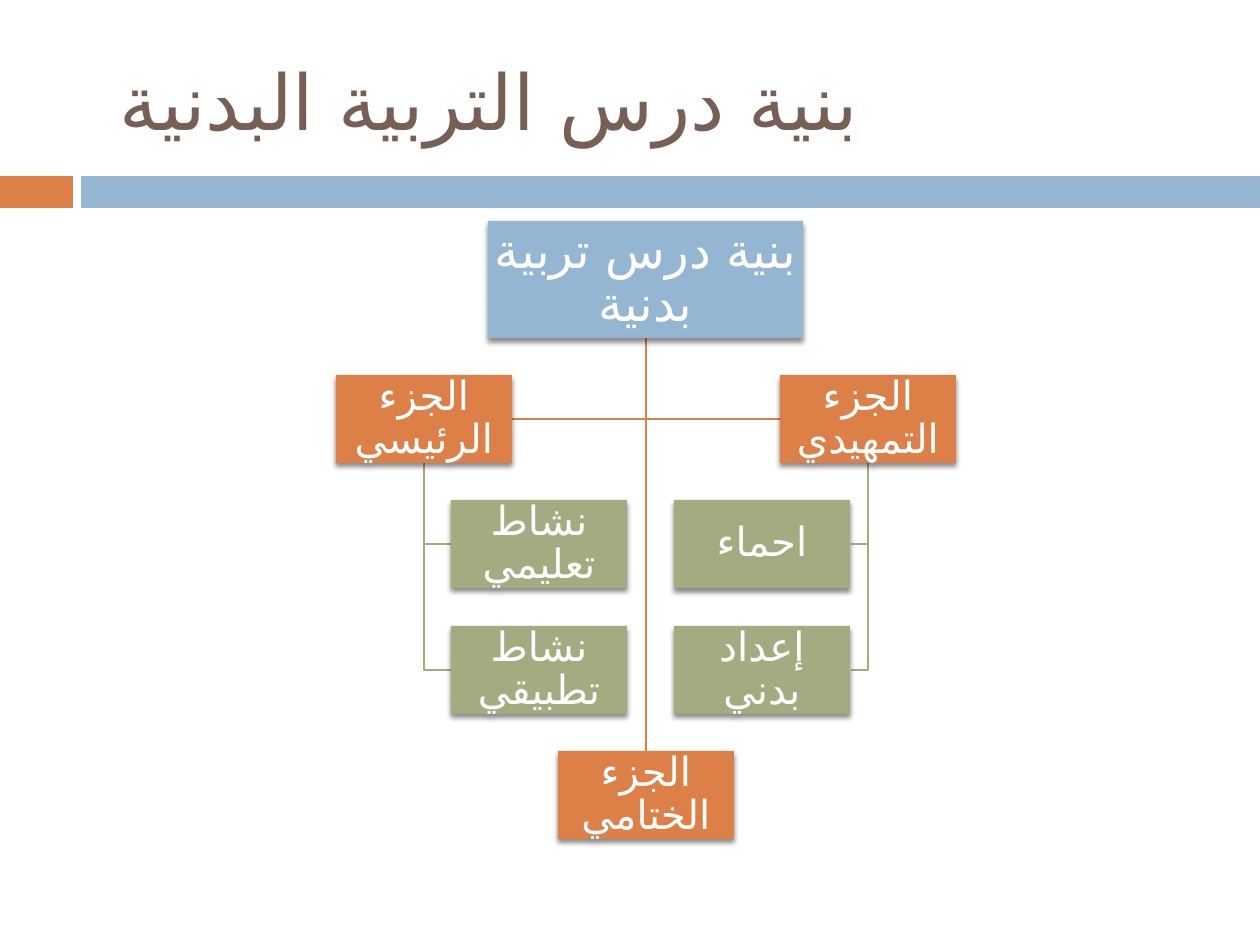
"""Build a slide with the structure chart of a physical education lesson."""
from lxml import etree
from pptx import Presentation
from pptx.dml.color import RGBColor
from pptx.enum.shapes import MSO_CONNECTOR, MSO_SHAPE
from pptx.enum.text import MSO_ANCHOR, MSO_AUTO_SIZE, PP_ALIGN
from pptx.oxml import parse_xml
from pptx.oxml.ns import nsdecls, qn
from pptx.util import Pt

RECTANGLE = MSO_SHAPE.RECTANGLE
STRAIGHT = MSO_CONNECTOR.STRAIGHT
MIDDLE = MSO_ANCHOR.MIDDLE
NO_AUTOFIT = MSO_AUTO_SIZE.NONE
LEFT, CENTER = PP_ALIGN.LEFT, PP_ALIGN.CENTER

BLUE = RGBColor(0x94, 0xB6, 0xD2)
ORANGE = RGBColor(0xDD, 0x80, 0x47)
GREEN = RGBColor(0xA5, 0xAB, 0x81)
BROWN = RGBColor(0x77, 0x5F, 0x55)
WHITE = RGBColor(0xFF, 0xFF, 0xFF)

PX = 914400 / 126
FONT = "Cabin"
ARABIC_FONT = "DejaVu Sans"
SHADOW = (
    f'<a:effectLst {nsdecls("a")}><a:outerShdw blurRad="38100" dist="30480" dir="5400000" '
    'rotWithShape="0"><a:srgbClr val="000000"><a:alpha val="45000"/></a:srgbClr>'
    "</a:outerShdw></a:effectLst>"
)


def add_bar(left, top, width, height, color):
    bar = page.shapes.add_shape(RECTANGLE, *(round(value * PX) for value in (left, top, width, height)))
    bar.shadow.inherit = False
    bar.fill.solid()
    bar.fill.fore_color.rgb = color
    bar.line.fill.background()
    return bar


def write_text(shape, text, size, color, alignment, side_margin, end_margin, spacing):
    frame = shape.text_frame
    settings = {
        "word_wrap": True,
        "auto_size": NO_AUTOFIT,
        "vertical_anchor": MIDDLE,
        "margin_left": round(side_margin * PX),
        "margin_right": round(side_margin * PX),
        "margin_top": round(end_margin * PX),
        "margin_bottom": round(end_margin * PX),
    }
    for name, value in settings.items():
        setattr(frame, name, value)
    paragraph = frame.paragraphs[0]
    paragraph.alignment = alignment
    paragraph.line_spacing = spacing
    paragraph._p.get_or_add_pPr().set("rtl", "1")
    span = paragraph.add_run()
    span.text = text
    for name, value in {"name": FONT, "size": Pt(size)}.items():
        setattr(span.font, name, value)
    span.font.color.rgb = color
    etree.SubElement(span._r.get_or_add_rPr(), qn("a:cs"), typeface=ARABIC_FONT)


deck = Presentation()
deck.slide_width, deck.slide_height = round(1260 * PX), round(945 * PX)
page = deck.slides.add_slide(deck.slide_layouts[5])

add_bar(0, 176, 73, 32, ORANGE)
add_bar(81, 176, 1179, 32, BLUE)

title = page.shapes.title
for name, value in {"left": 84, "top": 32, "width": 1124, "height": 136}.items():
    setattr(title, name, round(value * PX))
write_text(title, "بنية درس التربية البدنية", 44, BROWN, LEFT, 36, 6, 1.0)

BOX_WIDTH, BOX_HEIGHT = 176, 88
ROOT_BOTTOM, CENTER_X = 338, 646
rows = [375 + round(125.4 * index) for index in range(4)]
middles = [row + BOX_HEIGHT // 2 for row in rows]

branches = [
    (868, 851, 780, 674, "الجزء التمهيدي", ["احماء", "إعداد بدني"]),
    (424, 451, 336, 451, "الجزء الرئيسي", ["نشاط تعليمي", "نشاط تطبيقي"]),
]
boxes = [
    (488, 221, 315, 117, BLUE, "بنية درس تربية بدنية", 28),
    (558, rows[3], BOX_WIDTH, BOX_HEIGHT, ORANGE, "الجزء الختامي", 23),
]
bends = []
for stem, child_edge, part_left, child_left, part, children in branches:
    part_edge = part_left if part_left > CENTER_X else part_left + BOX_WIDTH
    bends.append((ORANGE, CENTER_X, ROOT_BOTTOM, middles[0], part_edge))
    boxes.append((part_left, rows[0], BOX_WIDTH, BOX_HEIGHT, ORANGE, part, 23))
    for row, middle, child in zip(rows[1:], middles[1:], children):
        bends.append((GREEN, stem, rows[0] + BOX_HEIGHT, middle, child_edge))
        boxes.append((child_left, row, BOX_WIDTH, BOX_HEIGHT, GREEN, child, 23))

for color, start_x, start_y, end_y, end_x in bends:
    builder = page.shapes.build_freeform(start_x, start_y, scale=PX)
    builder.add_line_segments([(start_x, end_y), (end_x, end_y)], close=False)
    bend = builder.convert_to_shape()
    bend.shadow.inherit = False
    bend.fill.background()
    bend.line.color.rgb = color
    bend.line.width = Pt(1.5)

trunk = page.shapes.add_connector(
    STRAIGHT, *(round(value * PX) for value in (CENTER_X, ROOT_BOTTOM, CENTER_X, rows[3]))
)
trunk.line.color.rgb = ORANGE
trunk.line.width = Pt(1.5)
etree.SubElement(trunk._element.spPr, qn("a:effectLst"))

for left, top, width, height, color, text, size in boxes:
    box = add_bar(left, top, width, height, color)
    properties = box._element.spPr
    properties.replace(properties.find(qn("a:effectLst")), parse_xml(SHADOW))
    write_text(box, text, size, WHITE, CENTER, 3, 3, 0.9)

deck.save("out.pptx")
